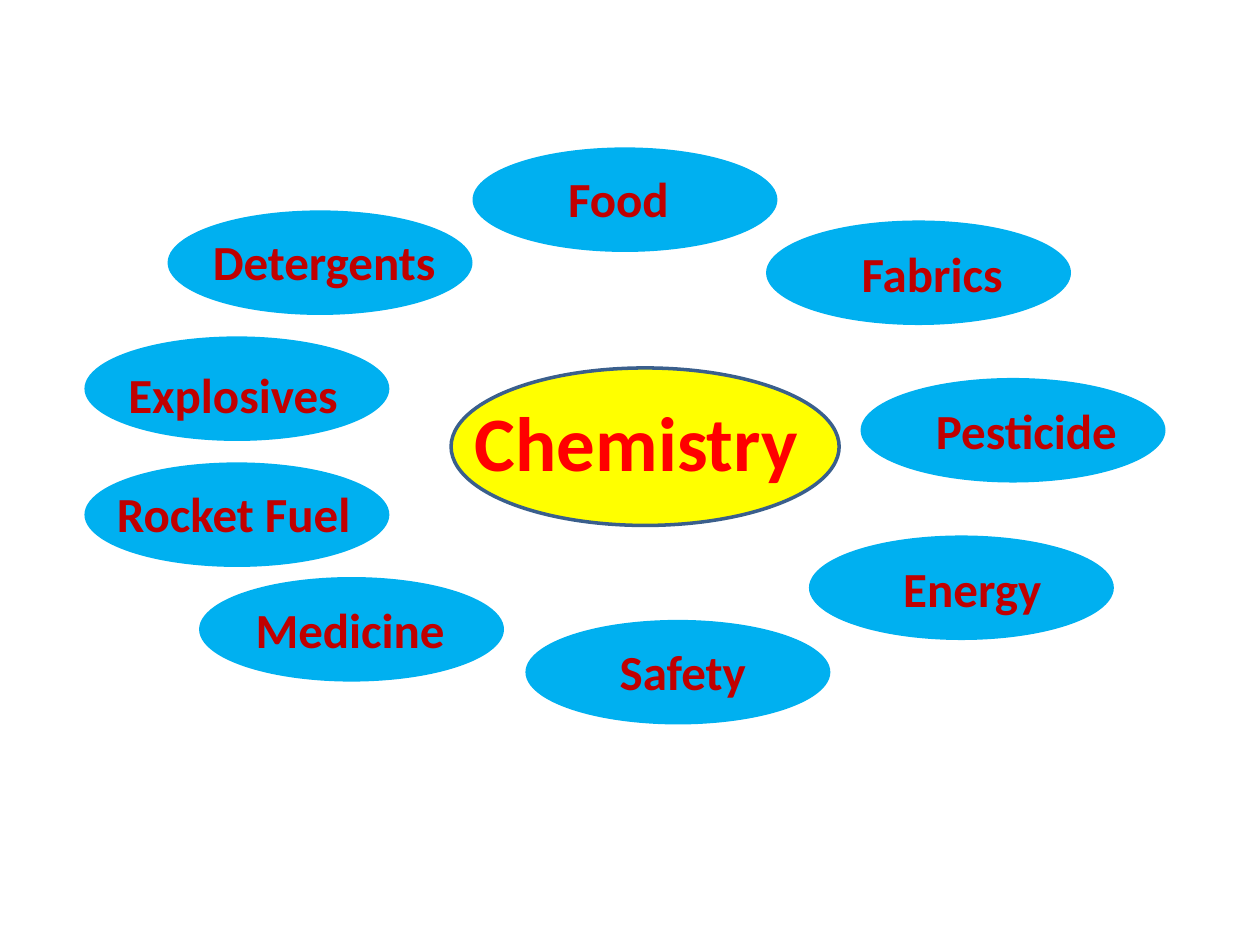
from dataclasses import dataclass

from pptx import Presentation
from pptx.dml.color import RGBColor
from pptx.enum.shapes import MSO_SHAPE
from pptx.enum.text import MSO_AUTO_SIZE
from pptx.shapes.group import GroupShape
from pptx.slide import Slide
from pptx.util import Inches, Pt

OVAL = MSO_SHAPE.OVAL
FIT_SHAPE = MSO_AUTO_SIZE.SHAPE_TO_FIT_TEXT
BLANK_LAYOUT = 6


@dataclass(frozen=True)
class Style:
    width: float
    height: float
    label_height: float
    fill: RGBColor
    color: RGBColor
    size: int
    line: RGBColor | None = None


@dataclass(frozen=True)
class Theme:
    font: str
    line_width: float
    hub: Style
    topic: Style


@dataclass(frozen=True)
class Bubble:
    text: str
    left: float
    top: float
    label_left: float
    label_top: float
    label_width: float


THEME = Theme(
    font="Calibri",
    line_width=2,
    hub=Style(3.08, 1.25, 0.84, RGBColor(0xFF, 0xFF, 0x00),
              RGBColor(0xFF, 0x00, 0x00), 44, RGBColor(0x3A, 0x5F, 0x8C)),
    topic=Style(2.42, 0.83, 0.57, RGBColor(0x00, 0xB0, 0xF0),
                RGBColor(0xC0, 0x00, 0x00), 28),
)

HUB = Bubble("Chemistry", 3.58, 2.92, 3.67, 3.08, 2.79)

TOPICS = [
    Bubble("Food", 3.75, 1.17, 4.41, 1.29, 1.01),
    Bubble("Medicine", 1.58, 4.58, 1.93, 4.71, 1.72),
    Bubble("Fabrics", 6.08, 1.75, 6.74, 1.88, 1.33),
    Bubble("Pesticide", 6.83, 3, 7.33, 3.13, 1.65),
    Bubble("Detergents", 1.33, 1.67, 1.59, 1.79, 1.99),
    Bubble("Explosives", 0.67, 2.67, 0.92, 2.84, 1.88),
    Bubble("Rocket Fuel", 0.67, 3.67, 0.83, 3.79, 2.08),
    Bubble("Safety", 4.17, 4.92, 4.82, 5.04, 1.22),
    Bubble("Energy", 6.42, 4.25, 7.07, 4.38, 1.31),
]


def add_oval(group: GroupShape, bubble: Bubble, style: Style) -> None:
    sp = group.shapes.add_shape(OVAL, Inches(bubble.left), Inches(bubble.top),
                                Inches(style.width), Inches(style.height))
    sp.shadow.inherit = False
    sp.fill.solid()
    sp.fill.fore_color.rgb = style.fill
    if style.line is None:
        sp.line.fill.background()
    else:
        sp.line.color.rgb = style.line
        sp.line.width = Pt(THEME.line_width)


def add_label(group: GroupShape, bubble: Bubble, style: Style) -> None:
    sp = group.shapes.add_textbox(Inches(bubble.label_left), Inches(bubble.label_top),
                                  Inches(bubble.label_width), Inches(style.label_height))
    tf = sp.text_frame
    tf.word_wrap = False
    tf.auto_size = FIT_SHAPE
    tf.text = bubble.text
    font = tf.paragraphs[0].runs[0].font
    font.name = THEME.font
    font.size = Pt(style.size)
    font.bold = True
    font.color.rgb = style.color


def add_bubble(s: Slide, bubble: Bubble, style: Style) -> None:
    group = s.shapes.add_group_shape()
    add_oval(group, bubble, style)
    add_label(group, bubble, style)


def main() -> None:
    prs = Presentation()
    prs.slide_width = Inches(10)
    prs.slide_height = Inches(7.5)
    s = prs.slides.add_slide(prs.slide_layouts[BLANK_LAYOUT])
    add_bubble(s, HUB, THEME.hub)
    for topic in TOPICS:
        add_bubble(s, topic, THEME.topic)
    prs.save("out.pptx")


if __name__ == "__main__":
    main()
